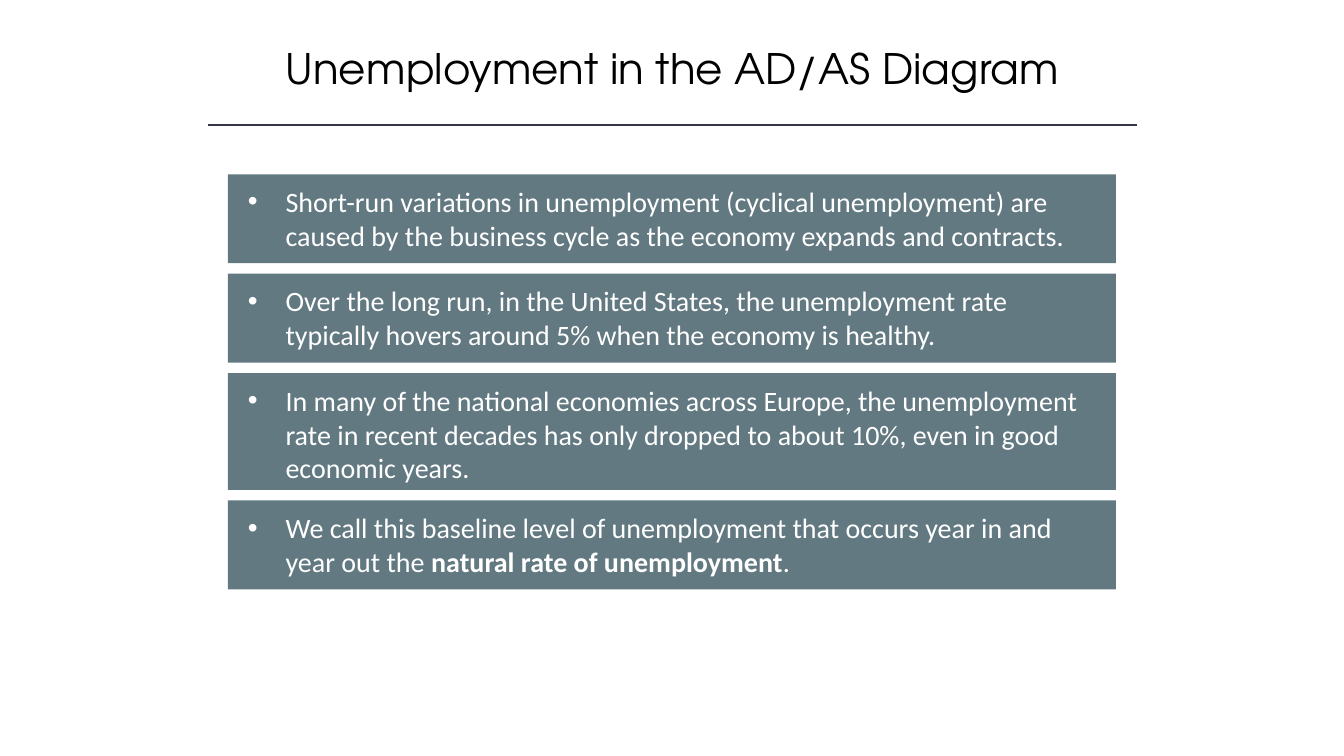
from lxml.etree import SubElement
from pptx import Presentation
from pptx.dml.color import RGBColor
from pptx.enum.shapes import MSO_CONNECTOR as CONN, MSO_SHAPE as SHAPE
from pptx.enum.text import MSO_ANCHOR as ANCHOR, MSO_AUTO_SIZE as FIT, PP_ALIGN as ALIGN
from pptx.oxml.ns import qn
from pptx.util import Pt

PANEL, RULE, WHITE, BLACK = "627981", "323542", "FFFFFF", "000000"
LINE_HEIGHT, GAP = 20, 7.5
POINTS = [
    (2, [("Short-run variations in unemployment (cyclical unemployment) are caused by "
          "the business cycle as the economy expands and contracts.", False)]),
    (2, [("Over the long run, in the United States, the unemployment rate typically "
          "hovers around 5% when the economy is healthy.", False)]),
    (3, [("In many of the national economies across Europe, the unemployment rate in "
          "recent decades has only dropped to about 10%, even in good economic years.", False)]),
    (2, [("We call this baseline level of unemployment that occurs year in and year out the ", False),
         ("natural rate of unemployment", True), (".", False)]),
]


def rgb(value):
    """Turn a hex string into a colour."""
    return RGBColor.from_string(value)


def style(r, name, size, color, bold=False):
    """Set the font of a run."""
    r.font.name, r.font.size, r.font.bold = name, Pt(size), bold
    r.font.color.rgb = rgb(color)


def add_title(slide, text, x, y, w, h):
    """Add the centred title in its box and the rule below it."""
    tf = slide.shapes.add_textbox(Pt(x), Pt(y), Pt(w), Pt(h)).text_frame
    tf.word_wrap = True
    tf.margin_left = tf.margin_right = tf.margin_top = tf.margin_bottom = Pt(3.6)
    p = tf.paragraphs[0]
    p.text, p.alignment = text, ALIGN.CENTER
    style(p.runs[0], "TeX Gyre Adventor", 30, BLACK)
    line_y = y + h + 18.7
    line = slide.shapes.add_connector(CONN.STRAIGHT, Pt(x + 24.5), Pt(line_y), Pt(x + w - 24.5), Pt(line_y))
    line.line.color.rgb, line.line.width = rgb(RULE), Pt(1)
    SubElement(line._element.spPr, qn("a:effectLst"))


def add_block(shapes, x, y, w, h):
    """Add a plain filled rectangle."""
    sp = shapes.add_shape(SHAPE.RECTANGLE, Pt(x), Pt(y), Pt(w), Pt(h))
    sp.shadow.inherit = False
    sp.fill.solid()
    sp.fill.fore_color.rgb = rgb(PANEL)
    sp.line.fill.background()
    return sp


def add_card(slide, parts, x, y, w, h):
    """Add a panel with one bulleted paragraph."""
    shapes = slide.shapes.add_group_shape().shapes
    add_block(shapes, x, y, w, h)
    tf = add_block(shapes, x + 7.2, y + 3.8, w - 19.4, h - 8).text_frame
    tf.word_wrap, tf.vertical_anchor, tf.auto_size = True, ANCHOR.TOP, FIT.SHAPE_TO_FIT_TEXT
    p = tf.paragraphs[0]
    p.alignment = ALIGN.LEFT
    pPr = p._p.get_or_add_pPr()
    pPr.set("marL", str(Pt(27)))
    pPr.set("indent", str(Pt(-27)))
    SubElement(pPr, qn("a:buFont"), typeface="Arial")
    SubElement(pPr, qn("a:buChar"), char="•")
    for text, bold in parts:
        r = p.add_run()
        r.text = text
        style(r, "Calibri", 20, WHITE, bold)


def add_cards(slide, x, y, w):
    """Stack the cards downwards with equal gaps."""
    for lines, parts in POINTS:
        h = 23.5 + lines * LINE_HEIGHT
        add_card(slide, parts, x, y, w, h)
        y += h + GAP


def main():
    """Build the slide and save it."""
    prs = Presentation()
    prs.slide_width, prs.slide_height = Pt(960), Pt(540)
    slide = prs.slides.add_slide(prs.slide_layouts[6])
    add_title(slide, "Unemployment in the AD/AS Diagram", 123.8, 26.6, 712.8, 43.9)
    add_cards(slide, 162.7, 124.5, 634.3)
    prs.save("out.pptx")


if __name__ == "__main__":
    main()
